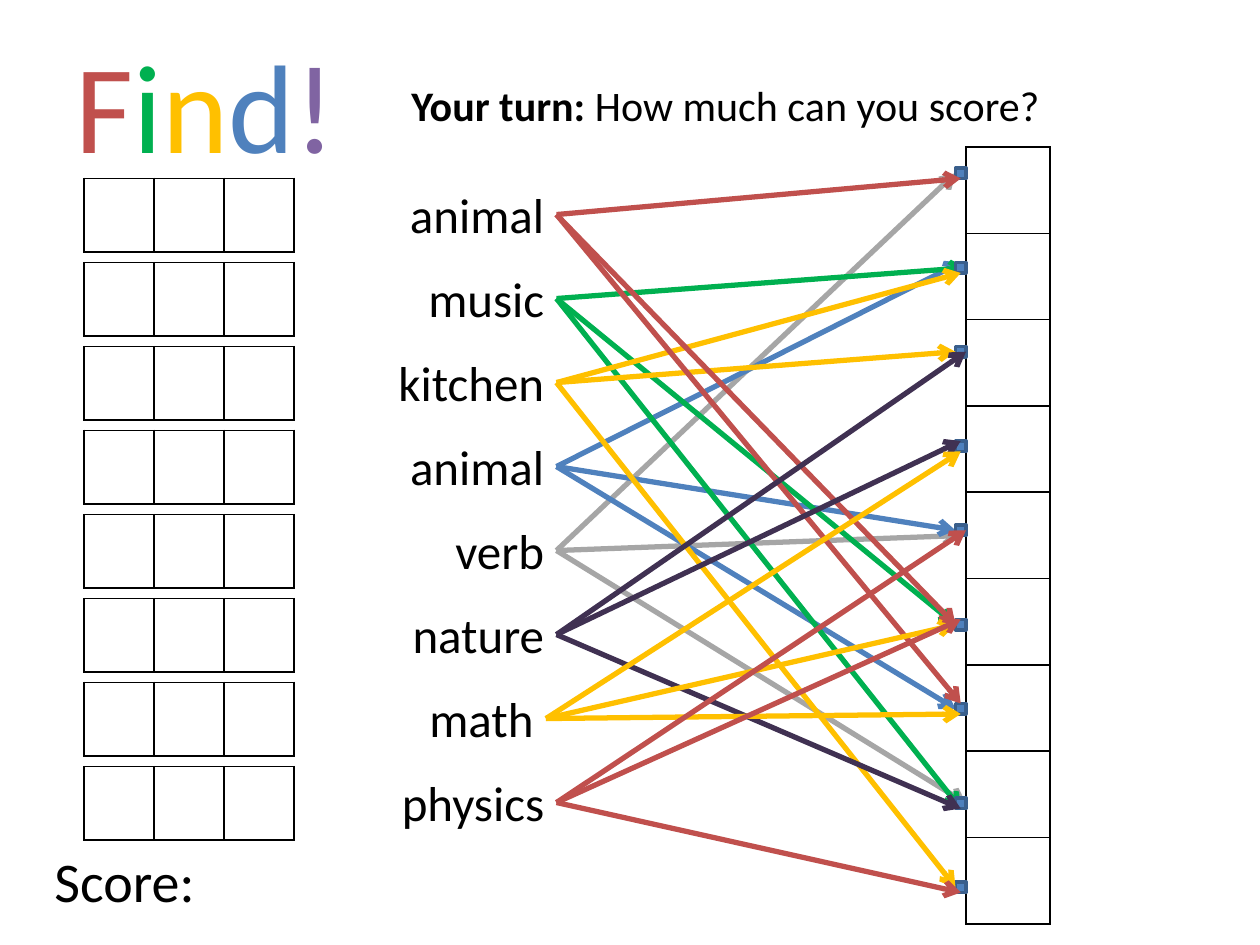
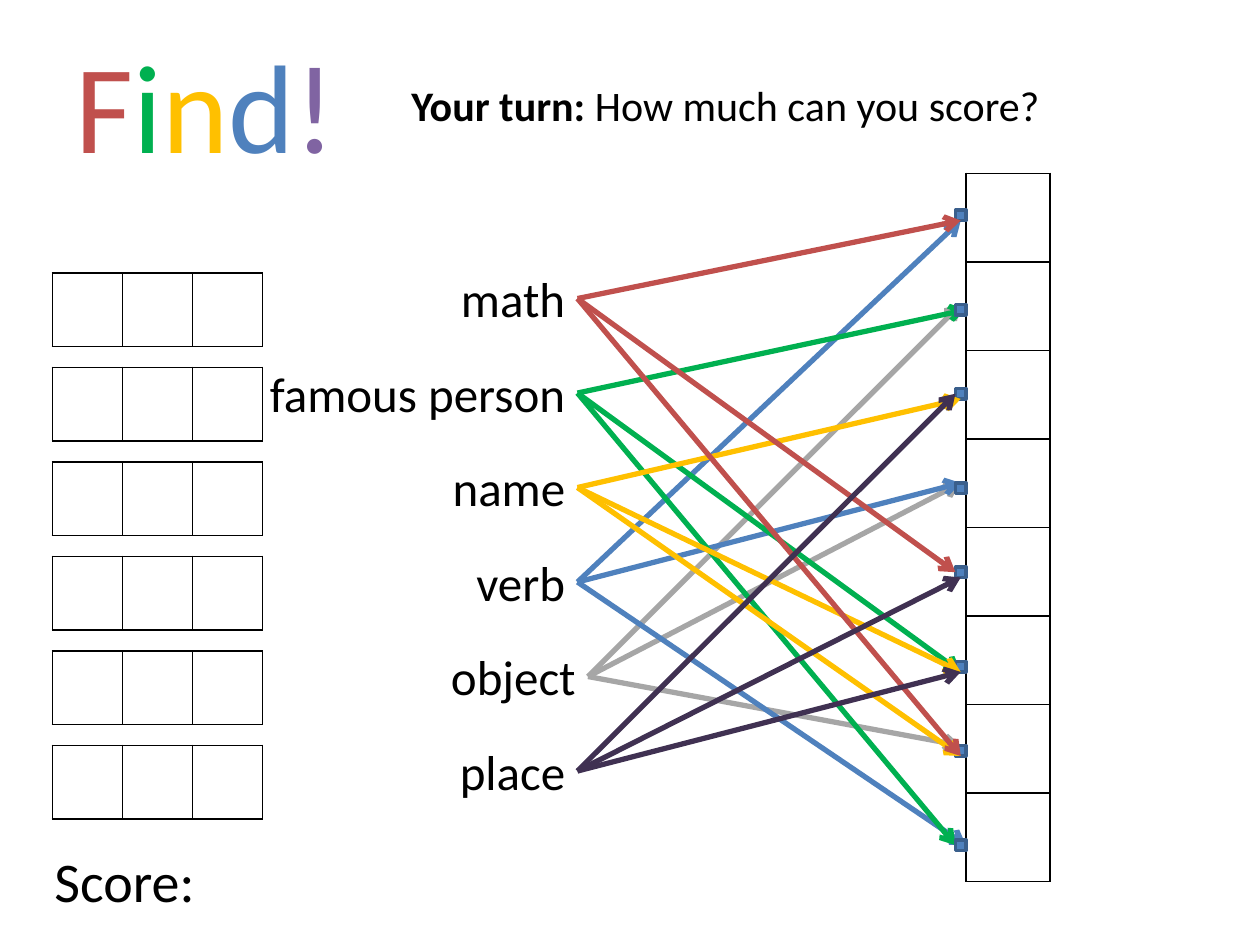
"""Builds two word-puzzle slides where each word is wired to its three letter boxes."""
from lxml import etree
from pptx import Presentation
from pptx import util as u
from pptx.dml.color import RGBColor
from pptx.enum import shapes, text
from pptx.oxml import parse_xml
from pptx.oxml.ns import qn

RED, GREEN, YELLOW, BLUE = "C0504D", "00B050", "FFC000", "4F81BD"
GREY, VIOLET, PLUM, BLACK = "A6A6A6", "8064A2", "403152", "000000"
TOP, LEFT, BOTTOM, RIGHT = range(4)
NS = "http://schemas.openxmlformats.org/drawingml/2006/main"

deck = Presentation()
deck.slide_width, deck.slide_height = u.Inches(10), u.Inches(7.5)
GRID = deck.slide_width // 120


def paint(target, color):
    target.solid()
    target.fore_color.rgb = RGBColor.from_string(color)


def write(page, left, top, width, height, size, runs, align=text.PP_ALIGN.LEFT):
    box = page.shapes.add_textbox(*(round(n * GRID) for n in (left, top, width, height)))
    box.text_frame.word_wrap = True
    box.text_frame.auto_size = text.MSO_AUTO_SIZE.SHAPE_TO_FIT_TEXT
    para = box.text_frame.paragraphs[0]
    para.alignment = align
    for words, color, bold in runs:
        span = para.add_run()
        span.text = words
        span.font.name, span.font.size, span.font.bold = "Calibri", u.Pt(size), bold
        paint(span.font.fill, color)
    return box


# Each clue: row, word, left column, right column, colour, (letter box, side) ends.
puzzles = [
    dict(word_top=17, pitch=8, strip_top=17, strip_left=8, letters=9,
         column_top=14, column_height=74, port_top=16, clues=[
             (4, "verb", 28, 53, GREY, [(0, LEFT), (4, BOTTOM), (7, RIGHT)]),
             (3, "animal", 25, 53, BLUE, [(1, TOP), (4, LEFT), (6, LEFT)]),
             (1, "music", 27, 53, GREEN, [(1, RIGHT), (5, LEFT), (7, BOTTOM)]),
             (2, "kitchen", 20, 53, YELLOW, [(1, BOTTOM), (2, LEFT), (8, LEFT)]),
             (0, "animal", 22, 53, RED, [(0, BOTTOM), (5, LEFT), (6, TOP)]),
             (5, "nature", 23, 53, PLUM, [(2, RIGHT), (3, TOP), (7, BOTTOM)]),
             (6, "math", 23, 52, YELLOW, [(3, BOTTOM), (5, LEFT), (6, BOTTOM)]),
             (7, "physics", 19, 53, RED, [(4, RIGHT), (5, TOP), (8, BOTTOM)])]),
    dict(word_top=25, pitch=9, strip_top=26, strip_left=5, letters=8,
         column_top=16.5, column_height=67.5, port_top=20, clues=[
             (4, "object", 31, 56, GREY, [(1, TOP), (3, TOP), (6, TOP)]),
             (3, "verb", 42, 55, BLUE, [(0, BOTTOM), (3, TOP), (7, RIGHT)]),
             (1, "famous person", 24, 55, GREEN, [(1, RIGHT), (5, BOTTOM), (7, LEFT)]),
             (2, "name", 22, 55, YELLOW, [(6, BOTTOM), (2, BOTTOM), (5, BOTTOM)]),
             (0, "math", 34, 55, RED, [(0, BOTTOM), (4, LEFT), (6, BOTTOM)]),
             (5, "place", 40, 55, PLUM, [(2, LEFT), (4, BOTTOM), (5, BOTTOM)])]),
]

for puzzle in puzzles:
    page = deck.slides.add_slide(deck.slide_layouts[6])
    clues, letters, pitch = puzzle["clues"], puzzle["letters"], puzzle["pitch"]

    tables = [(92, puzzle["column_top"], letters, 1, 8, puzzle["column_height"] / letters)]
    tables += [(puzzle["strip_left"], puzzle["strip_top"] + pitch * row, 1, 3, 20 / 3, 7)
               for row in range(len(clues))]
    for left, top, rows, columns, cell_width, cell_height in tables:
        table = page.shapes.add_table(
            rows, columns, round(left * GRID), round(top * GRID),
            round(columns * cell_width * GRID), round(rows * cell_height * GRID)).table
        table.first_row = table.horz_banding = False
        for row in table.rows:
            row.height = round(cell_height * GRID)
        for cell in table.iter_cells():
            properties = cell._tc.get_or_add_tcPr()
            for edge in "LRTB":
                properties.append(parse_xml(
                    f'<a:ln{edge} xmlns:a="{NS}" w="12700"><a:solidFill>'
                    f'<a:srgbClr val="{BLACK}"/></a:solidFill></a:ln{edge}>'))
            cell.fill.background()

    ports = []
    for letter in range(letters):
        port_row = puzzle["port_top"] + (17 * letter + 1) // 2
        port = page.shapes.add_shape(
            shapes.MSO_SHAPE.RECTANGLE, 91 * GRID, port_row * GRID, GRID, GRID)
        port.shadow.inherit = False
        paint(port.fill, BLUE)
        paint(port.line.fill, "3A5F8C")
        port.line.width = u.Pt(2)
        ports.append(port)

    for order, (row, word, left, right, color, ends) in enumerate(clues):
        if order == 3:
            for port in ports:
                page.shapes._spTree.append(port._element)
        label = write(page, left, puzzle["word_top"] + pitch * row, right - left, 6.87, 28,
                      [(word, BLACK, False)], text.PP_ALIGN.RIGHT)
        for letter, side in ends:
            wire = page.shapes.add_connector(shapes.MSO_CONNECTOR.STRAIGHT, 0, 0, 0, 0)
            wire.begin_connect(label, RIGHT)
            wire.end_connect(ports[letter], side)
            paint(wire.line.fill, color)
            wire.line.width = u.Pt(3)
            etree.SubElement(wire.line._get_or_add_ln(), qn("a:tailEnd"), type="arrow")
            etree.SubElement(wire._element.spPr, qn("a:effectLst"))

    write(page, 6, 2, 31, 15.75, 72,
          [(letter, color, False) for letter, color in
           zip("Find!", (RED, GREEN, YELLOW, BLUE, VIOLET))])
    write(page, 38, 7, 66, 6, 24, [("Your turn: ", BLACK, True),
                                   ("How much can you score?", BLACK, False)])
    write(page, 4, 80, 60, 7.67, 32, [("Score:", BLACK, False)])

deck.save("out.pptx")
